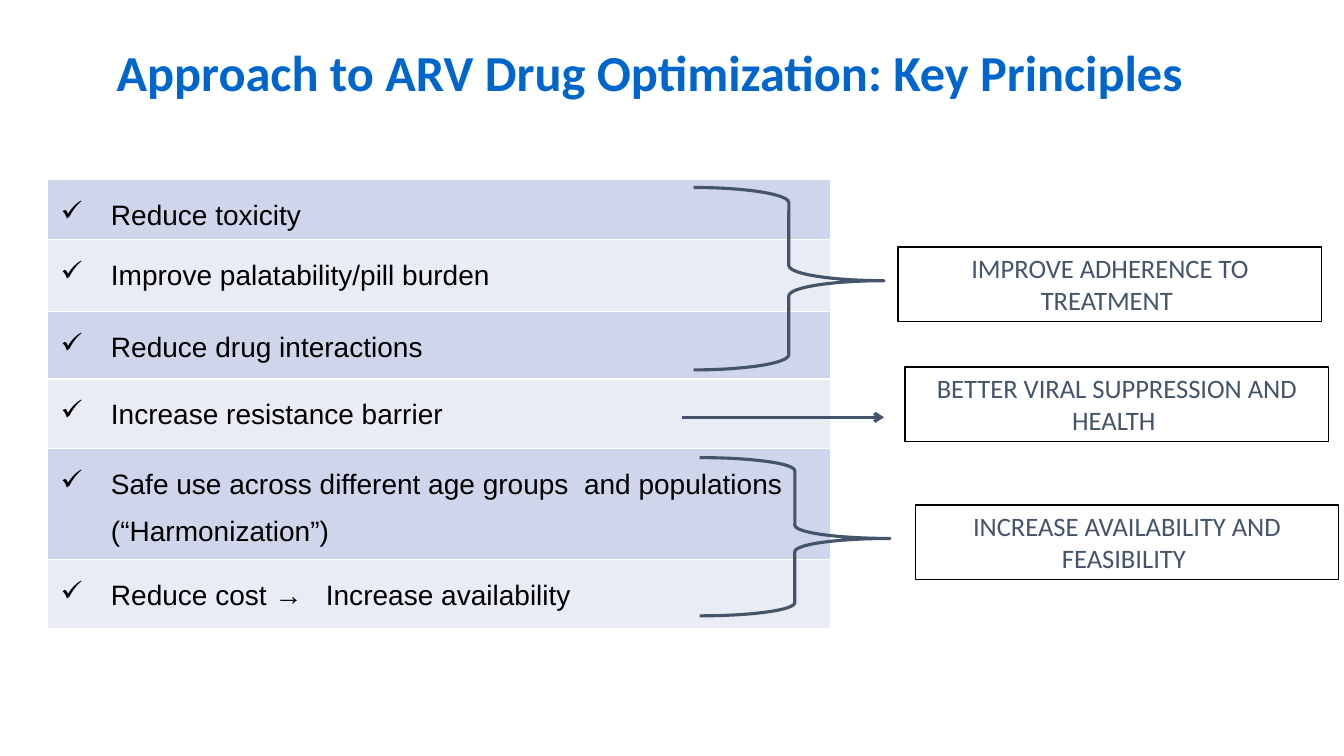
from lxml import etree
from pptx import Presentation
from pptx.dml.color import RGBColor
from pptx.enum.shapes import MSO_CONNECTOR, MSO_SHAPE
from pptx.enum.text import MSO_ANCHOR, PP_ALIGN
from pptx.oxml import parse_xml
from pptx.oxml.ns import qn
from pptx.util import Inches, Pt

RECT, BRACE = MSO_SHAPE.RECTANGLE, MSO_SHAPE.RIGHT_BRACE
STRAIGHT = MSO_CONNECTOR.STRAIGHT
CENTER, MIDDLE = PP_ALIGN.CENTER, MSO_ANCHOR.MIDDLE
NS = 'xmlns:a="http://schemas.openxmlformats.org/drawingml/2006/main"'
TITLE_ONLY = 5

BLUE, NAVY, SHADOW = "0066CC", "003366", "66B2FF"
SLATE, BLACK, WHITE = "44546A", "000000", "FFFFFF"
BANDS = ("CFD5EA", "E9EBF5")


def rgb(value):
    return RGBColor.from_string(value)


class Page:
    """Style and current slide; lengths are percentages of the slide's size."""

    def __init__(self, prs):
        self.prs = prs
        self.s = prs.slides.add_slide(prs.slide_layouts[TITLE_ONLY])

    def x(self, share):
        return round(self.prs.slide_width * share / 100)

    def y(self, share):
        return round(self.prs.slide_height * share / 100)

    def box(self, left, top, width, height):
        return self.x(left), self.y(top), self.x(width), self.y(height)

    def font(self, r, name, size, color, bold=False):
        r.font.name, r.font.size, r.font.bold = name, Pt(size), bold
        r.font.color.rgb = rgb(color)

    def outline(self, sp, color, width):
        sp.line.color.rgb = rgb(color)
        sp.line.width = Pt(width)

    def title(self, text, *place):
        sp = self.s.shapes.title
        sp.left, sp.top, sp.width, sp.height = self.box(*place)
        tf = sp.text_frame
        tf.vertical_anchor = MIDDLE
        tf.margin_top = tf.margin_bottom = Inches(0.04)
        tf.margin_left = tf.margin_right = Inches(0.09)
        p = tf.paragraphs[0]
        p.alignment, p.line_spacing = CENTER, 0.9
        r, gap = p.add_run(), p.add_run()
        r.text, gap.text = text, " "
        self.font(r, "Calibri", 36, BLUE, True)
        self.font(gap, "Arial", 32, NAVY, True)
        # Soft blue text shadow
        fill = r.font._element.find(qn("a:solidFill"))
        fill.addnext(parse_xml(
            f'<a:effectLst {NS}><a:outerShdw dist="25400" dir="2700000">'
            f'<a:srgbClr val="{SHADOW}"/></a:outerShdw></a:effectLst>'))

    def checklist(self, items, left, top, width):
        height = sum(share for _, share in items)
        frame = self.s.shapes.add_table(
            len(items), 1, *self.box(left, top, width, height))
        table = frame.table
        table.first_row = table.horz_banding = False
        for i, (text, share) in enumerate(items):
            table.rows[i].height = self.y(share)
            self.check_cell(table.cell(i, 0), text, BANDS[i % 2])

    def check_cell(self, cell, text, color):
        cell.fill.solid()
        cell.fill.fore_color.rgb = rgb(color)
        cell.margin_left = cell.margin_right = Inches(0.13)
        cell.margin_top = cell.margin_bottom = Inches(0.05)
        for i, side in enumerate(("lnL", "lnR", "lnT", "lnB")):
            cell._tc.tcPr.insert(i, parse_xml(
                f'<a:{side} {NS} w="12700"><a:solidFill>'
                f'<a:srgbClr val="{WHITE}"/></a:solidFill></a:{side}>'))
        p = cell.text_frame.paragraphs[0]
        p.text, p.line_spacing = text, 1.5
        pPr = p._p.get_or_add_pPr()
        pPr.set("marL", str(Inches(0.5)))
        pPr.set("indent", str(-Inches(0.5)))
        etree.SubElement(pPr, qn("a:buChar")).set("char", "✓")
        self.font(p.runs[0], "Arial", 20, BLACK)

    def shape(self, kind, place, color, width):
        sp = self.s.shapes.add_shape(kind, *self.box(*place))
        sp.shadow.inherit = False
        sp.fill.background()
        self.outline(sp, color, width)
        return sp

    def brace(self, *place):
        sp = self.shape(BRACE, place, SLATE, 2.25)
        sp.adjustments[0], sp.adjustments[1] = 0.083, 0.511

    def outcome(self, text, *place):
        tf = self.shape(RECT, place, BLACK, 1).text_frame
        tf.word_wrap, tf.vertical_anchor = True, MIDDLE
        p = tf.paragraphs[0]
        p.text, p.alignment = text, CENTER
        self.font(p.runs[0], "Calibri", 19, SLATE)

    def arrow(self, left, right, level):
        line = self.s.shapes.add_connector(
            STRAIGHT, self.x(left), self.y(level), self.x(right), self.y(level))
        self.outline(line, SLATE, 2.25)
        etree.SubElement(line.line._get_or_add_ln(), qn("a:tailEnd")).set("type", "arrow")
        etree.SubElement(line._element.spPr, qn("a:effectLst"))


def main():
    prs = Presentation()
    prs.slide_width, prs.slide_height = Inches(13.33), Inches(7.5)
    page = Page(prs)

    # Principles
    page.title("Approach to ARV Drug Optimization: Key Principles",
               2.78, 5.73, 92.1, 8.4)
    page.checklist([
        ("Reduce toxicity", 8),
        ("Improve palatability/pill burden", 9.47),
        ("Reduce drug interactions", 8.93),
        ("Increase resistance barrier", 9.2),
        ("Safe use across different age groups  and populations (“Harmonization”)", 14.67),
        ("Reduce cost →   Increase availability", 9.2),
    ], 3.53, 23.73, 58.28)

    # Links from principles to outcomes
    page.brace(51.6, 24.8, 14.18, 24.13)
    page.arrow(50.78, 65.78, 55.2)
    page.brace(52.05, 60.53, 14.18, 20.93)

    # Outcomes
    for text, left, top in (
        ("IMPROVE ADHERENCE TO TREATMENT ", 66.83, 32.67),
        ("BETTER VIRAL SUPPRESSION AND HEALTH ", 67.35, 48.53),
        ("INCREASE AVAILABILITY AND FEASIBILITY ", 68.1, 66.8),
    ):
        page.outcome(text, left, top, 31.5, 9.87)

    prs.save("out.pptx")


if __name__ == "__main__":
    main()
